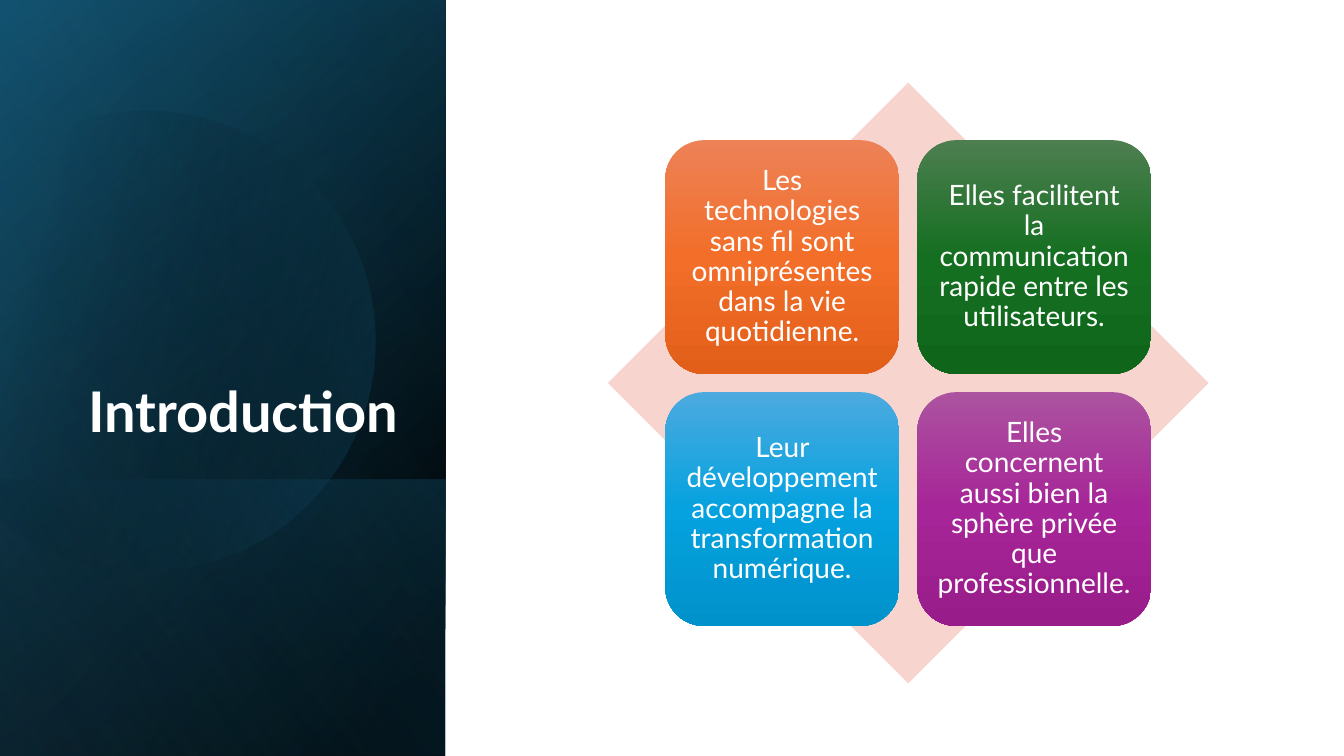
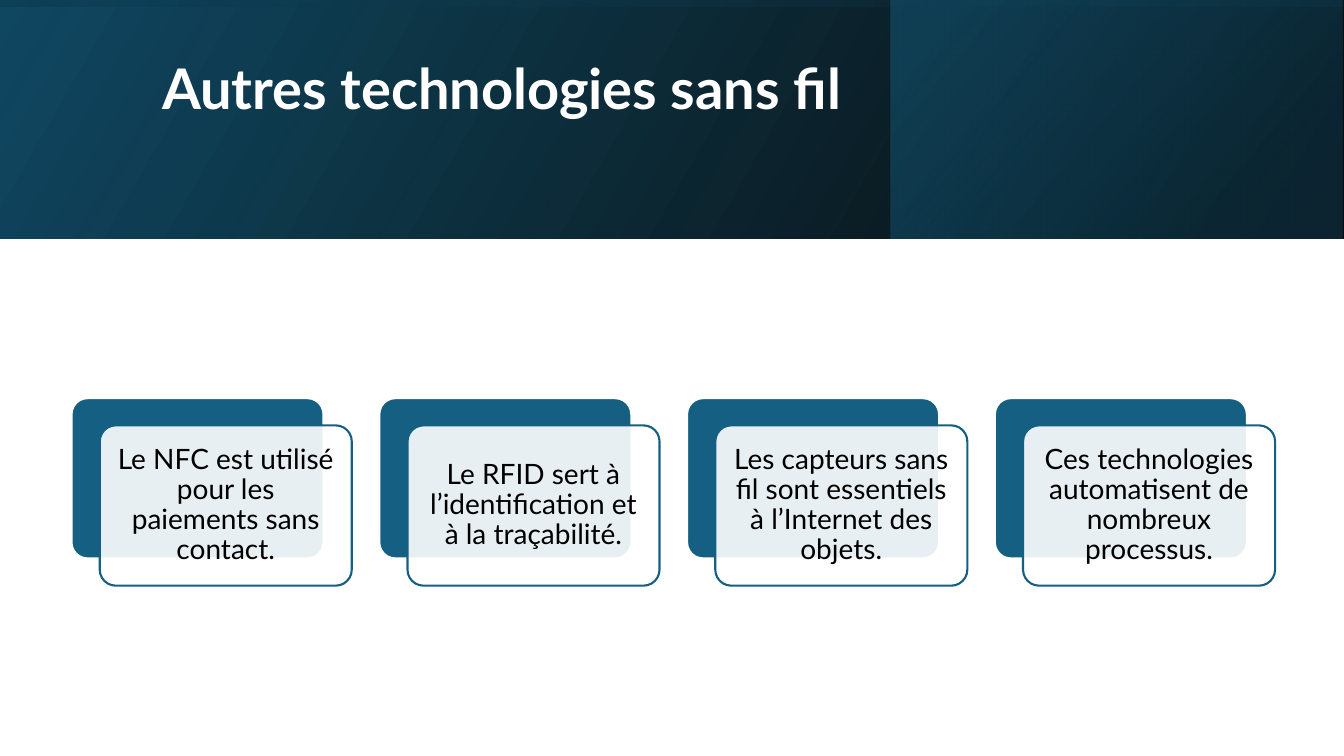
from math import cos, sin, radians

from pptx import Presentation
from pptx.dml.color import RGBColor
from pptx.enum.shapes import MSO_SHAPE as Kind
from pptx.enum.text import MSO_ANCHOR as Anchor, PP_ALIGN as Align
from pptx.oxml.ns import qn
from pptx.util import Inches, Pt
from lxml.etree import SubElement

FONT = "Lato"
WHITE = RGBColor(0xFF, 0xFF, 0xFF)
BLACK = RGBColor(0x00, 0x00, 0x00)
NAVY = RGBColor(0x10, 0x48, 0x62)
TEAL = RGBColor(0x15, 0x60, 0x82)
DEEP = RGBColor(0x0B, 0x30, 0x41)
SKY = RGBColor(0x46, 0xB1, 0xE1)
BLUSH = RGBColor(0xF7, 0xD5, 0xCE)
ORANGE = ("ED8257", "F26E29", "E25F1A")
GREEN = ("4D7E50", "156F21", "0F661B")
BLUE = ("4CAADF", "05A2DF", "0092CB")
PURPLE = ("AC53A0", "A62598", "991C8B")

TILES = [
    (ORANGE, "Les technologies sans fil sont omniprésentes dans la vie quotidienne."),
    (GREEN, "Elles facilitent la communication rapide entre les utilisateurs."),
    (BLUE, "Leur développement accompagne la transformation numérique."),
    (PURPLE, "Elles concernent aussi bien la sphère privée que professionnelle."),
]
CARDS = [
    "Le NFC est utilisé pour les paiements sans contact.",
    "Le RFID sert à l’identification et à la traçabilité.",
    "Les capteurs sans fil sont essentiels à l’Internet des objets.",
    "Ces technologies automatisent de nombreux processus.",
]
DISC = [
    ("moveTo", (1.49, 1.1)),
    ("cubicBezTo", (2.46, 1.12), (3.35, 1.77), (3.63, 2.75)),
    ("cubicBezTo", (3.98, 3.97), (3.28, 5.23), (2.07, 5.58)),
    ("cubicBezTo", (1.31, 5.8), (0.53, 5.61), (-0.03, 5.14)),
    ("lnTo", (-0.15, 5.03)),
    ("lnTo", (-0.15, 1.75)),
    ("lnTo", (0, 1.61)),
    ("cubicBezTo", (0.23, 1.42), (0.5, 1.28), (0.8, 1.19)),
    ("cubicBezTo", (1.03, 1.13), (1.26, 1.1), (1.49, 1.1)),
    ("close",),
]


def set_alpha(color, alpha):
    SubElement(color, qn("a:alpha"), val=str(alpha * 1000))


def blend(shape, angle, *stops):
    """Fill with a linear gradient of (position, colour, opacity) stops, in percent."""
    shape.fill.gradient()
    grad = shape.element.spPr.find(qn("a:gradFill"))
    grad.set("rotWithShape", "1")
    for child in list(grad):
        grad.remove(child)
    group = SubElement(grad, qn("a:gsLst"))
    for place, color, alpha in stops:
        stop = SubElement(group, qn("a:gs"), pos=str(place * 1000))
        set_alpha(SubElement(stop, qn("a:srgbClr"), val=str(color)), alpha)
    SubElement(grad, qn("a:lin"), ang=str(angle * 60000), scaled="0")


def make_plain(shape):
    shape.shadow.inherit = False
    shape.line.fill.background()


def add_shape(slide, kind, left, top, width, height, fill=None):
    shape = slide.shapes.add_shape(
        kind, Inches(left), Inches(top), Inches(width), Inches(height))
    make_plain(shape)
    if fill is not None:
        shape.fill.solid()
        shape.fill.fore_color.rgb = fill
    return shape


def add_band(slide, box, turn, angle, *stops):
    """Add a mirrored gradient rectangle, turned by the given degrees."""
    band = add_shape(slide, Kind.RECTANGLE, *box)
    band.rotation = turn
    band.element.spPr.xfrm.set("flipH", "1")
    blend(band, angle, *stops)


def add_curve(slide, box, turn, steps):
    """Add a turned freeform whose steps are given as they lie on the slide."""
    left, top, width, height = box
    pen = slide.shapes.build_freeform(Inches(left), Inches(top))
    right, base = Inches(left + width), Inches(top + height)
    pen.add_line_segments([(right, Inches(top)), (right, base), (Inches(left), base)])
    curve = pen.convert_to_shape()
    make_plain(curve)
    curve.rotation = turn
    outline = next(curve.element.iter(qn("a:path")))
    for child in list(outline):
        outline.remove(child)
    c, s = cos(radians(-turn)), sin(radians(-turn))
    for verb, *dots in steps:
        step = SubElement(outline, qn("a:" + verb))
        for x, y in dots:
            dx, dy = x - left - width / 2, y - top - height / 2
            SubElement(step, qn("a:pt"),
                       x=str(Inches(width / 2 + dx * c - dy * s)),
                       y=str(Inches(height / 2 + dx * s + dy * c)))
    return curve


def write(shape, text, size, color, align, anchor, bold=False):
    frame = shape.text_frame
    frame.word_wrap = True
    frame.vertical_anchor = anchor
    para = frame.paragraphs[0]
    para.alignment = align
    para.line_spacing = 0.9
    run = para.add_run()
    run.text = text
    run.font.name = FONT
    run.font.size = Pt(size)
    run.font.bold = bold
    run.font.color.rgb = color


def add_title(slide, text, box, align, anchor, below=0.05):
    shape = slide.shapes.add_textbox(*map(Inches, box))
    shape.text_frame.margin_bottom = Inches(below)
    write(shape, text, 40, WHITE, align, anchor, True)


def label(shape, text, color):
    frame = shape.text_frame
    frame.margin_left = frame.margin_right = Inches(0.08)
    frame.margin_top = frame.margin_bottom = Inches(0.08)
    write(shape, text, 20, color, Align.CENTER, Anchor.MIDDLE)


def add_tile(slide, left, top, shades, text):
    tile = add_shape(slide, Kind.ROUNDED_RECTANGLE, left, top, 2.32, 2.32)
    blend(tile, 90, *((50 * i, shade, 100) for i, shade in enumerate(shades)))
    label(tile, text, WHITE)


def add_plate(slide, left, top, fill, edge):
    plate = add_shape(slide, Kind.ROUNDED_RECTANGLE, left, top, 2.5, 1.59, fill)
    plate.adjustments[0] = 0.1
    plate.line.color.rgb = edge
    plate.line.width = Pt(1.5)
    return plate


def add_card(slide, left, top, text):
    """Add a dark plate with a translucent text plate offset in front."""
    add_plate(slide, left, top, TEAL, WHITE)
    front = add_plate(slide, left + 0.28, top + 0.27, WHITE, TEAL)
    set_alpha(front.element.spPr.find(qn("a:solidFill"))[0], 90)
    label(front, text, BLACK)


def build_intro(slide):
    panel = (-1.54, 1.54, 7.5, 4.42)
    add_band(slide, panel, 90, 50, (8, BLACK, 100), (100, NAVY, 100))
    add_band(slide, panel, 90, 30, (0, BLACK, 0), (99, TEAL, 46))
    add_band(slide, (0.84, 3.92, 2.74, 4.42), 90, 130,
             (2, TEAL, 29), (100, BLACK, 30))
    disc = add_curve(slide, (-0.55, 1.06, 4.27, 4.57), -16.1, DISC)
    blend(disc, 30, (29, BLACK, 0), (100, TEAL, 43))
    add_band(slide, panel, 90, 120, (0, BLACK, 0), (99, SKY, 11))
    add_title(slide, "Introduction", (0.64, 1.84, 3.41, 2.62),
              Align.RIGHT, Anchor.BOTTOM)
    add_shape(slide, Kind.DIAMOND, 6.03, 0.82, 5.96, 5.96, BLUSH)
    for i, (shades, text) in enumerate(TILES):
        row, col = divmod(i, 2)
        add_tile(slide, 6.6 + 2.5 * col, 1.39 + 2.5 * row, shades, text)


def build_others(slide):
    add_band(slide, (0, 0, 13.33, 2.37), 0, 330, (0, BLACK, 96), (100, NAVY, 100))
    add_band(slide, (8.84, 0, 4.48, 2.37), 0, 320, (19, DEEP, 68), (100, TEAL, 48))
    add_band(slide, (5.48, -5.48, 2.37, 13.33), 270, 350,
             (23, NAVY, 16), (99, BLACK, 45))
    add_title(slide, "Autres technologies sans fil", (1.51, 0.38, 10.63, 1.72),
              Align.LEFT, Anchor.MIDDLE, 0.71)
    for i, text in enumerate(CARDS):
        add_card(slide, 0.71 + 9.16 * i / 3, 3.95, text)


def main():
    deck = Presentation()
    deck.slide_width = Inches(40 / 3)
    deck.slide_height = Inches(7.5)
    for build in (build_intro, build_others):
        build(deck.slides.add_slide(deck.slide_layouts[6]))
    deck.save("out.pptx")


if __name__ == "__main__":
    main()
